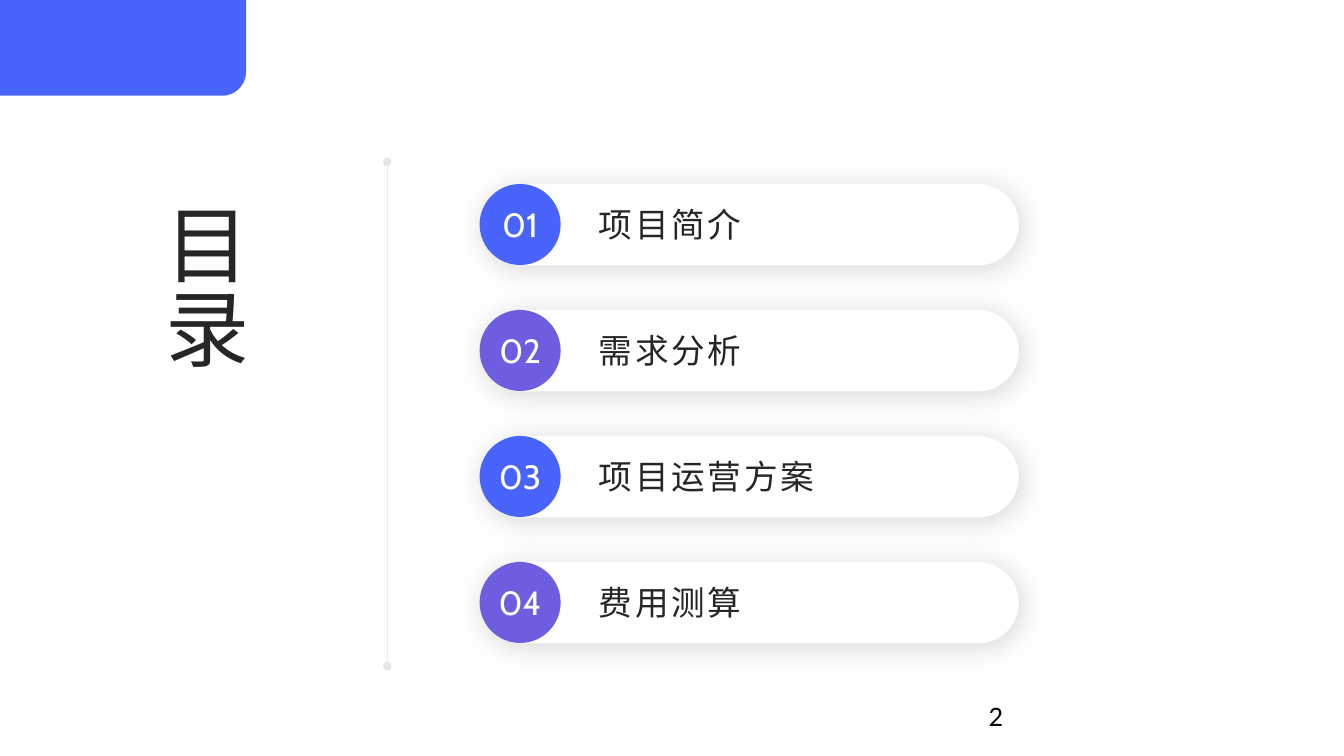
from lxml.etree import SubElement
from pptx import Presentation
from pptx.dml.color import RGBColor as RGB
from pptx.enum.shapes import MSO_CONNECTOR as CONN, MSO_SHAPE as SHAPE
from pptx.enum.text import MSO_ANCHOR as ANCHOR, MSO_AUTO_SIZE as FIT, PP_ALIGN as ALIGN
from pptx.oxml.ns import qn
from pptx.util import Inches, Pt

THEME = {
    "blue": "4864FC", "violet": "6C5EDE", "ink": "262626", "white": "FFFFFF",
    "black": "000000", "grey": "808080",
    "font": "Cabin", "number_font": "Lato",
    "title": 60, "item": 24, "page": 18,
}
ITEMS = ["项目简介", "需求分析", "项目运营方案", "费用测算"]

prs = Presentation()
prs.slide_width, prs.slide_height = Inches(13.33), Inches(7.5)
COL, ROW = prs.slide_width / 32, prs.slide_height / 18
s = prs.slides.add_slide(prs.slide_layouts[5])


def cells(x, y, w, h):
    """Turn grid columns and rows into slide lengths."""
    return int(x * COL), int(y * ROW), int(w * COL), int(h * ROW)


def write(sp, text, size, color, align=ALIGN.LEFT, font="font", margin=0.1):
    """Put one formatted run in a shape and return it."""
    tf = sp.text_frame
    tf.word_wrap, tf.auto_size = True, FIT.NONE
    tf.vertical_anchor = ANCHOR.MIDDLE
    tf.margin_left = tf.margin_right = Inches(margin)
    tf.margin_top = tf.margin_bottom = 0
    p = tf.paragraphs[0]
    p.alignment = align
    r = p.add_run()
    r.text = text
    r.font.name, r.font.size = THEME[font], Pt(THEME[size])
    r.font.color.rgb = RGB.from_string(THEME[color])
    return r


# Corner block, rounded at the lower right
corner = s.shapes.add_shape(SHAPE.ROUND_1_RECTANGLE, *cells(0, 0, 5.86, 2.28))
corner.adjustments[0] = 0.25
corner.shadow.inherit = False
corner.fill.solid()
corner.fill.fore_color.rgb = RGB.from_string(THEME["blue"])
corner.line.fill.background()
corner._element.spPr.find(qn("a:xfrm")).set("flipV", "1")

# Divider with a dot at each end
x, top, _, bottom = cells(9.22, 3.86, 0, 15.86)
divider = s.shapes.add_connector(CONN.STRAIGHT, x, top, x, bottom)
divider.line.width = Pt(0.5)
divider.line.color.rgb = RGB.from_string(THEME["grey"])
ln = divider.line._get_or_add_ln()
SubElement(ln.find(".//" + qn("a:srgbClr")), qn("a:alpha"), val="20000")
for end in ("a:headEnd", "a:tailEnd"):
    SubElement(ln, qn(end), type="oval")
SubElement(divider._element.spPr, qn("a:effectLst"))

# Vertical title
title = s.shapes.title
title.left, title.top, title.width, title.height = cells(3.07, 4.7, 3.6, 9.46)
write(title, "目录", "title", "ink", ALIGN.CENTER)
body = title.text_frame._txBody.bodyPr
body.set("vert", "eaVert")
title.text_frame.margin_top = title.text_frame.margin_bottom = Inches(0.05)

# Agenda rows: shadowed pill, numbered disc, label
for i, item in enumerate(ITEMS):
    y = 4.38 + 3 * i
    pill = s.shapes.add_shape(SHAPE.ROUNDED_RECTANGLE, *cells(11.42, y, 12.84, 1.94))
    pill.adjustments[0] = 0.5
    disc = s.shapes.add_shape(SHAPE.OVAL, *cells(11.42, y, 1.93, 1.93))
    for sp, color in ((pill, "white"), (disc, ("blue", "violet")[i % 2])):
        sp.shadow.inherit = False
        sp.fill.solid()
        sp.fill.fore_color.rgb = RGB.from_string(THEME[color])
        sp.line.fill.background()
    shadow = SubElement(pill._element.spPr.find(qn("a:effectLst")), qn("a:outerShdw"),
                        blurRad=str(Pt(20)), dist=str(Pt(3)), dir=str(45 * 60000),
                        algn="tl", rotWithShape="0")
    tint = SubElement(shadow, qn("a:srgbClr"), val=THEME["grey"])
    SubElement(tint, qn("a:alpha"), val="30000")

    write(disc, f"{i + 1:02d}", "item", "white", ALIGN.CENTER, margin=0)
    disc.text_frame.word_wrap = False
    label = s.shapes.add_textbox(*cells(14.02, y, 9.98, 1.93))
    r = write(label, item, "item", "ink")
    r.font._element.set("spc", "200")

# Page number
page = s.shapes.add_textbox(*cells(23.3, 16.58, 7.08, 0.84))
write(page, "2", "page", "black", font="number_font")
page.text_frame.vertical_anchor = ANCHOR.TOP
page.text_frame.margin_top = page.text_frame.margin_bottom = Inches(0.05)

prs.save("out.pptx")
